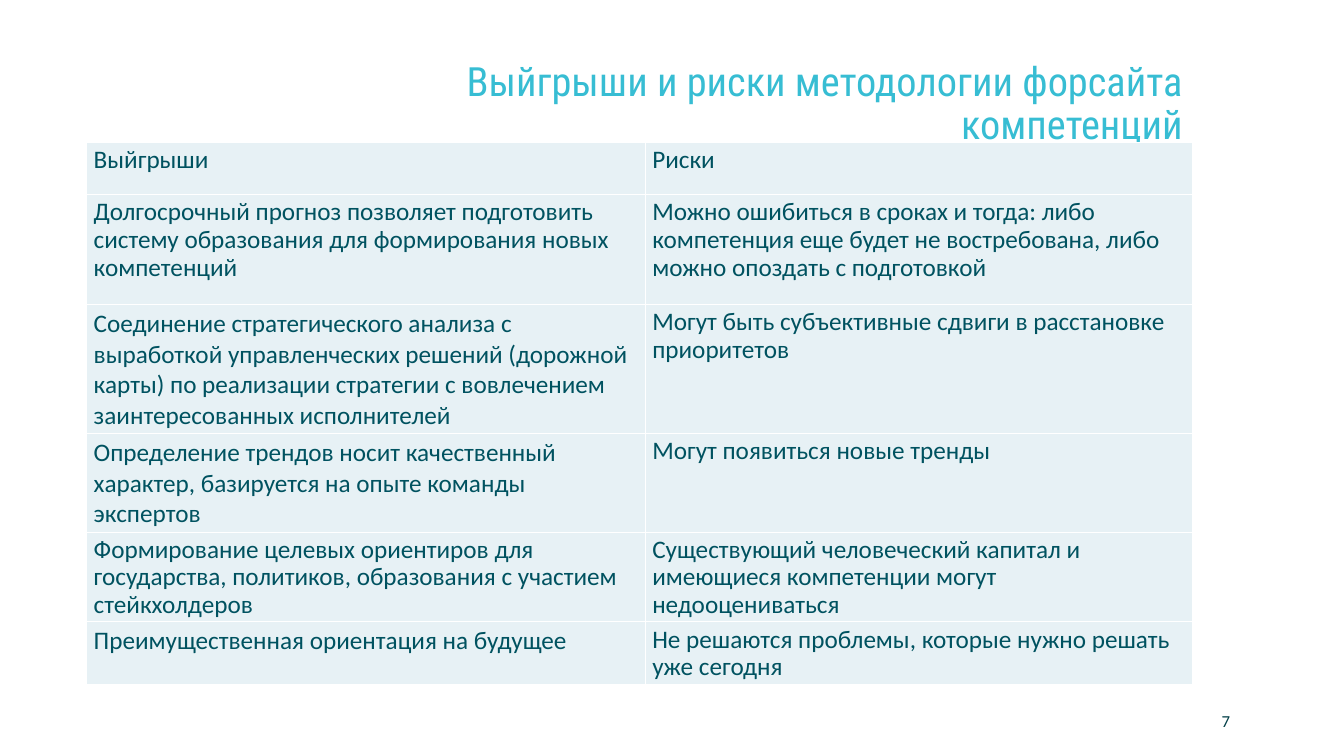
from dataclasses import dataclass

from lxml import etree
from pptx import Presentation
from pptx.dml.color import RGBColor
from pptx.enum.text import MSO_ANCHOR, PP_ALIGN
from pptx.oxml.ns import qn
from pptx.slide import Slide
from pptx.table import _Cell
from pptx.util import Inches, Pt

RIGHT = PP_ALIGN.RIGHT
TOP, MIDDLE = MSO_ANCHOR.TOP, MSO_ANCHOR.MIDDLE

TITLE_CYAN = RGBColor(0x37, 0xBD, 0xD3)
CELL_TEXT = RGBColor(0x00, 0x52, 0x60)
NUMBER_TEXT = RGBColor(0x02, 0x3F, 0x47)
CELL_FILL = RGBColor(0xE7, 0xF1, 0xF5)
BORDER_WHITE = RGBColor(0xFF, 0xFF, 0xFF)

COLUMN_WIDTHS = (5.54, 5.43)


@dataclass(frozen=True)
class Label:
    text: str
    left: float
    top: float
    width: float
    height: float
    font: str
    size: float
    color: RGBColor
    anchor: MSO_ANCHOR
    margin_top: float = 0.05
    line_spacing: float = 1.0


@dataclass(frozen=True)
class ComparisonRow:
    gain: str
    risk: str
    height: float
    compact_gain: bool = True


LABELS = (
    Label("Выйгрыши и риски методологии форсайта компетенций",
          3.52, 0.61, 8.31, 1.24, "Roboto Condensed", 28.8, TITLE_CYAN, TOP,
          margin_top=0, line_spacing=0.9),
    Label("7", 11.83, 6.95, 0.47, 0.4, "Calibri", 12, NUMBER_TEXT, MIDDLE),
)

ROWS = (
    ComparisonRow("Выйгрыши", "Риски", 0.52),
    ComparisonRow(
        "Долгосрочный прогноз позволяет подготовить систему образования "
        "для формирования новых компетенций",
        "Можно ошибиться в сроках и тогда: либо компетенция еще будет не "
        "востребована, либо можно опоздать с подготовкой", 1.09),
    ComparisonRow(
        "Соединение стратегического анализа с выработкой управленческих "
        "решений (дорожной карты) по реализации стратегии с вовлечением "
        "заинтересованных исполнителей",
        "Могут быть субъективные сдвиги в расстановке приоритетов",
        0.93, compact_gain=False),
    ComparisonRow(
        "Определение трендов носит качественный характер, базируется на "
        "опыте команды экспертов",
        "Могут появиться новые тренды", 0.59, compact_gain=False),
    ComparisonRow(
        "Формирование целевых ориентиров для государства, политиков, "
        "образования с участием стейкхолдеров",
        "Существующий человеческий капитал и имеющиеся компетенции могут "
        "недооцениваться", 0.73),
    ComparisonRow(
        "Преимущественная ориентация на будущее",
        "Не решаются проблемы, которые нужно решать уже сегодня",
        0.57, compact_gain=False),
)


def add_label(slide: Slide, label: Label) -> None:
    box = slide.shapes.add_textbox(Inches(label.left), Inches(label.top),
                                   Inches(label.width), Inches(label.height))
    frame = box.text_frame
    frame.word_wrap = True
    frame.vertical_anchor = label.anchor
    frame.margin_top = Inches(label.margin_top)
    frame.text = label.text
    paragraph = frame.paragraphs[0]
    paragraph.alignment = RIGHT
    paragraph.line_spacing = label.line_spacing
    paragraph.font.name = label.font
    paragraph.font.size = Pt(label.size)
    paragraph.font.color.rgb = label.color


def add_borders(cell: _Cell) -> None:
    properties = cell._tc.get_or_add_tcPr()
    # Border lines must stand before the fill in the cell properties
    for position, side in enumerate(("a:lnL", "a:lnR", "a:lnT", "a:lnB")):
        line = etree.Element(qn(side), w=str(Pt(1)))
        fill = etree.SubElement(line, qn("a:solidFill"))
        etree.SubElement(fill, qn("a:srgbClr"), val=str(BORDER_WHITE))
        properties.insert(position, line)


def fill_cell(cell: _Cell, text: str, compact: bool) -> None:
    cell.margin_left = cell.margin_right = Inches(0.07)
    cell.margin_top = cell.margin_bottom = Inches(0.04)
    cell.fill.solid()
    cell.fill.fore_color.rgb = CELL_FILL
    add_borders(cell)
    cell.text_frame.text = text
    paragraph = cell.text_frame.paragraphs[0]
    if compact:
        paragraph.line_spacing = 0.9
        paragraph.space_after = Pt(2)
    font = paragraph.runs[0].font
    font.name = "Calibri"
    font.size = Pt(18)
    font.color.rgb = CELL_TEXT


def add_comparison(slide: Slide) -> None:
    frame = slide.shapes.add_table(
        len(ROWS), len(COLUMN_WIDTHS), Inches(0.86), Inches(1.41),
        Inches(sum(COLUMN_WIDTHS)), Inches(sum(row.height for row in ROWS)))
    comparison = frame.table
    comparison.first_row = False
    comparison.horz_banding = False
    for column, width in zip(comparison.columns, COLUMN_WIDTHS):
        column.width = Inches(width)
    for index, row in enumerate(ROWS):
        comparison.rows[index].height = Inches(row.height)
        fill_cell(comparison.cell(index, 0), row.gain, row.compact_gain)
        fill_cell(comparison.cell(index, 1), row.risk, True)


def main() -> None:
    presentation = Presentation()
    presentation.slide_width = Inches(13.33)
    presentation.slide_height = Inches(7.5)
    slide = presentation.slides.add_slide(presentation.slide_layouts[6])

    # Title and slide number
    for label in LABELS:
        add_label(slide, label)

    # Gains and risks
    add_comparison(slide)

    presentation.save("out.pptx")


if __name__ == "__main__":
    main()
